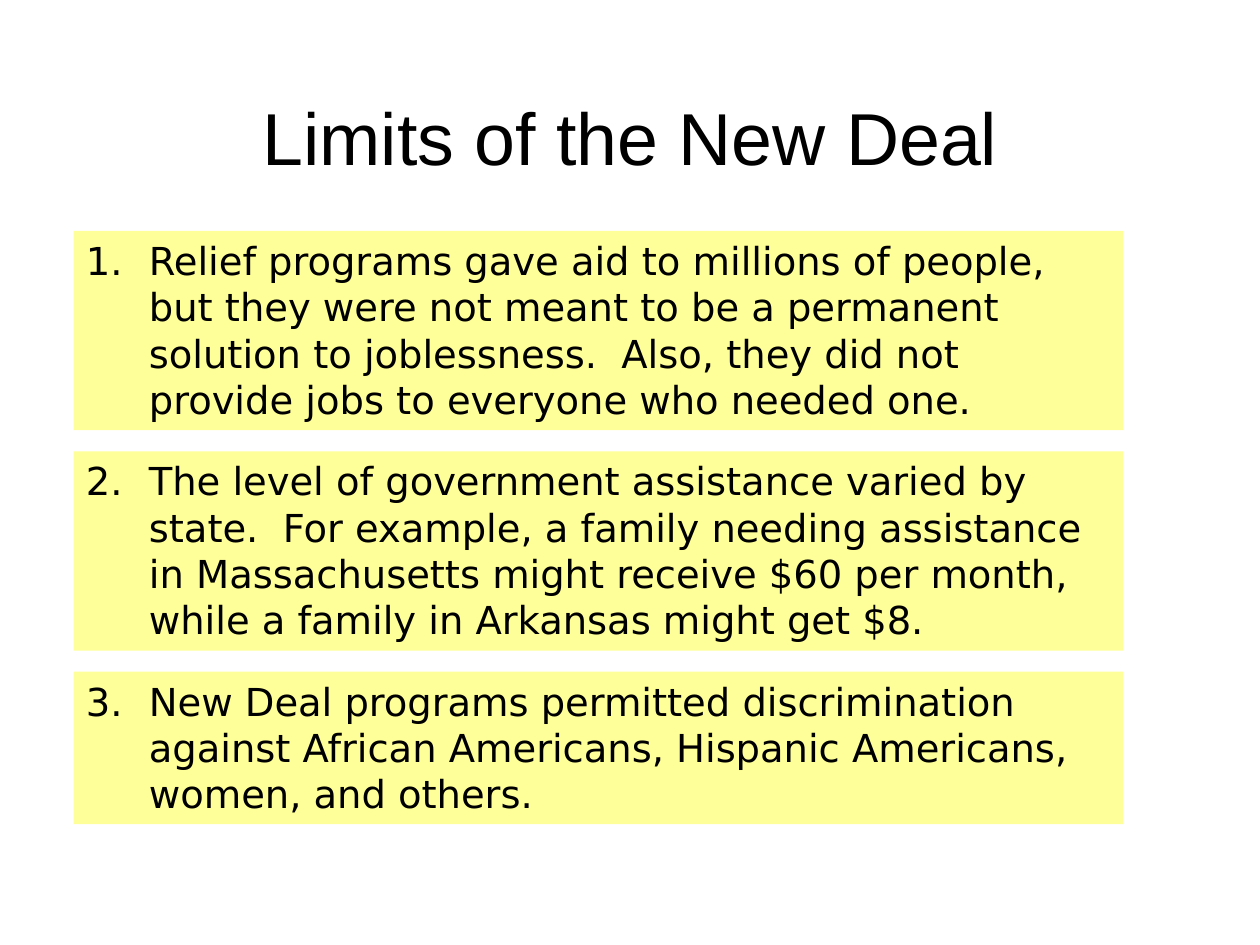
from dataclasses import dataclass

from lxml import etree
from pptx import Presentation
from pptx.dml.color import RGBColor
from pptx.enum.shapes import MSO_SHAPE
from pptx.enum.text import MSO_ANCHOR, MSO_AUTO_SIZE, PP_ALIGN
from pptx.oxml.ns import qn
from pptx.util import Pt

RECTANGLE = MSO_SHAPE.RECTANGLE
MIDDLE = MSO_ANCHOR.MIDDLE
TOP = MSO_ANCHOR.TOP
GROW = MSO_AUTO_SIZE.SHAPE_TO_FIT_TEXT
NO_FIT = MSO_AUTO_SIZE.NONE
LEFT = PP_ALIGN.LEFT
CENTER = PP_ALIGN.CENTER
TITLE_ONLY = 5


@dataclass(frozen=True)
class Theme:
    text: RGBColor = RGBColor(0, 0, 0)
    panel: RGBColor = RGBColor(0xFF, 0xFF, 0x99)
    title_font: str = "Arial"
    body_font: str = "DejaVu Sans"
    title_size: int = 42
    body_size: int = 22


THEME = Theme()
TITLE_BOX = (42, 30, 636, 96)
LIMITS_BOX = (42, 132, 600, 339)
PANEL_GAP = 12
NUMBER_INDENT = 36
LIMITS = [
    ("Relief programs gave aid to millions of people, but they were not meant to be "
     "a permanent solution to joblessness.  Also, they did not provide jobs to "
     "everyone who needed one.", 4),
    ("The level of government assistance varied by state.  For example, a family "
     "needing assistance in Massachusetts might receive $60 per month, while a "
     "family in Arkansas might get $8.", 4),
    ("New Deal programs permitted discrimination against African Americans, "
     "Hispanic Americans, women, and others.", 3),
]


def add_run(paragraph, text, font_name, size):
    run = paragraph.add_run()
    run.text = text
    run.font.name = font_name
    run.font.size = Pt(size)
    run.font.color.rgb = THEME.text


def number_paragraph(paragraph, number):
    properties = paragraph._p.get_or_add_pPr()
    properties.set("marL", str(Pt(NUMBER_INDENT)))
    properties.set("indent", str(-Pt(NUMBER_INDENT)))
    numbering = etree.SubElement(properties, qn("a:buAutoNum"), type="arabicPeriod")
    if number > 1:
        numbering.set("startAt", str(number))


def place_title(slide, box, text):
    title = slide.shapes.title
    title.left, title.top, title.width, title.height = map(Pt, box)
    frame = title.text_frame
    frame.auto_size = NO_FIT
    frame.vertical_anchor = MIDDLE
    paragraph = frame.paragraphs[0]
    paragraph.alignment = CENTER
    add_run(paragraph, text, THEME.title_font, THEME.title_size)


def add_panel(slide, box, number, text):
    panel = slide.shapes.add_shape(RECTANGLE, *map(Pt, box))
    panel.shadow.inherit = False
    panel.fill.solid()
    panel.fill.fore_color.rgb = THEME.panel
    panel.line.fill.background()
    frame = panel.text_frame
    frame.word_wrap = True
    frame.auto_size = GROW
    frame.vertical_anchor = TOP
    paragraph = frame.paragraphs[0]
    paragraph.alignment = LEFT
    number_paragraph(paragraph, number)
    add_run(paragraph, text, THEME.body_font, THEME.body_size)


def add_limits(slide, box, limits):
    left, top, width, height = box
    padding = 7.2
    gaps = PANEL_GAP * (len(limits) - 1)
    line_total = sum(lines for _, lines in limits)
    line_height = (height - gaps - padding * len(limits)) / line_total
    for number, (text, lines) in enumerate(limits, start=1):
        panel_height = lines * line_height + padding
        add_panel(slide, (left, top, width, panel_height), number, text)
        top += panel_height + PANEL_GAP


def main():
    presentation = Presentation()
    presentation.slide_width, presentation.slide_height = Pt(720), Pt(540)
    slide = presentation.slides.add_slide(presentation.slide_layouts[TITLE_ONLY])
    place_title(slide, TITLE_BOX, "Limits of the New Deal")
    add_limits(slide, LIMITS_BOX, LIMITS)
    presentation.save("out.pptx")


if __name__ == "__main__":
    main()
